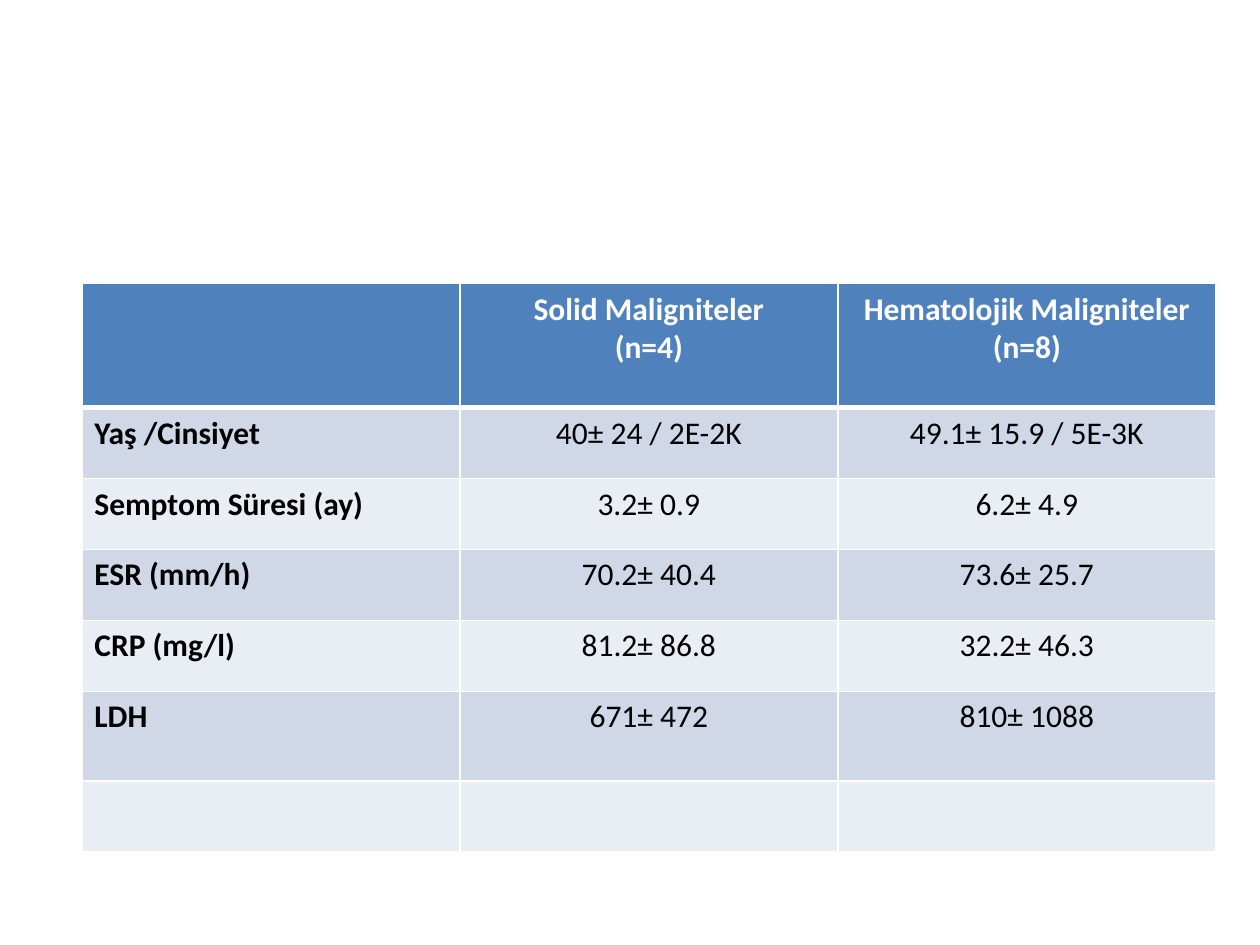
from lxml import etree
from pptx import Presentation
from pptx.dml.color import RGBColor
from pptx.enum.text import PP_ALIGN
from pptx.oxml.ns import qn
from pptx.util import Cm, Pt

LEFT, CENTER = PP_ALIGN.LEFT, PP_ALIGN.CENTER

ROWS = [
    ("", "Solid Maligniteler\n(n=4)", "Hematolojik Maligniteler\n(n=8)"),
    ("Yaş /Cinsiyet", "40± 24 / 2E-2K", "49.1± 15.9 / 5E-3K"),
    ("Semptom Süresi (ay)", "3.2± 0.9", "6.2± 4.9"),
    ("ESR (mm/h)", "70.2± 40.4", "73.6± 25.7"),
    ("CRP (mg/l)", "81.2± 86.8", "32.2± 46.3"),
    ("LDH", "671± 472", "810± 1088"),
    ("", "", ""),
]
HEIGHTS = [2.5, 1.43, 1.43, 1.43, 1.43, 1.8, 1.43]
COL_W = 7.62
WHITE, BLACK, HEADER = "FFFFFF", "000000", "4F81BD"
BANDS = ["E9EDF4", "D0D8E8"]


def rgb(value):
    return RGBColor.from_string(value)


def set_borders(cell, top, bottom):
    tc_pr = cell._tc.get_or_add_tcPr()
    for side, width in (("L", 1), ("R", 1), ("T", top), ("B", bottom)):
        ln = etree.SubElement(tc_pr, qn(f"a:ln{side}"), w=str(Pt(width)))
        fill = etree.SubElement(ln, qn("a:solidFill"))
        etree.SubElement(fill, qn("a:srgbClr"), val=WHITE)


def set_cell(cell, text, row, col):
    set_borders(cell, 3 if row == 1 else 1, 3 if row == 0 else 1)
    cell.fill.solid()
    cell.fill.fore_color.rgb = rgb(BANDS[row % 2] if row else HEADER)
    tf = cell.text_frame
    tf.text = text
    for p in tf.paragraphs:
        p.alignment = CENTER if col else LEFT
        for r in p.runs:
            r.font.name = "Calibri"
            r.font.size = Pt(18)
            r.font.bold = row == 0 or col == 0
            r.font.color.rgb = rgb(BLACK if row else WHITE)


def main():
    prs = Presentation()
    prs.slide_width, prs.slide_height = Cm(25.4), Cm(19.05)
    s = prs.slides.add_slide(prs.slide_layouts[6])
    cols = len(ROWS[0])
    table = s.shapes.add_table(len(ROWS), cols, Cm(1.65), Cm(5.72),
                               Cm(COL_W * cols), Cm(sum(HEIGHTS))).table
    for column in table.columns:
        column.width = Cm(COL_W)
    for i, (texts, height) in enumerate(zip(ROWS, HEIGHTS)):
        table.rows[i].height = Cm(height)
        for j, text in enumerate(texts):
            set_cell(table.cell(i, j), text, i, j)
    prs.save("out.pptx")


if __name__ == "__main__":
    main()
